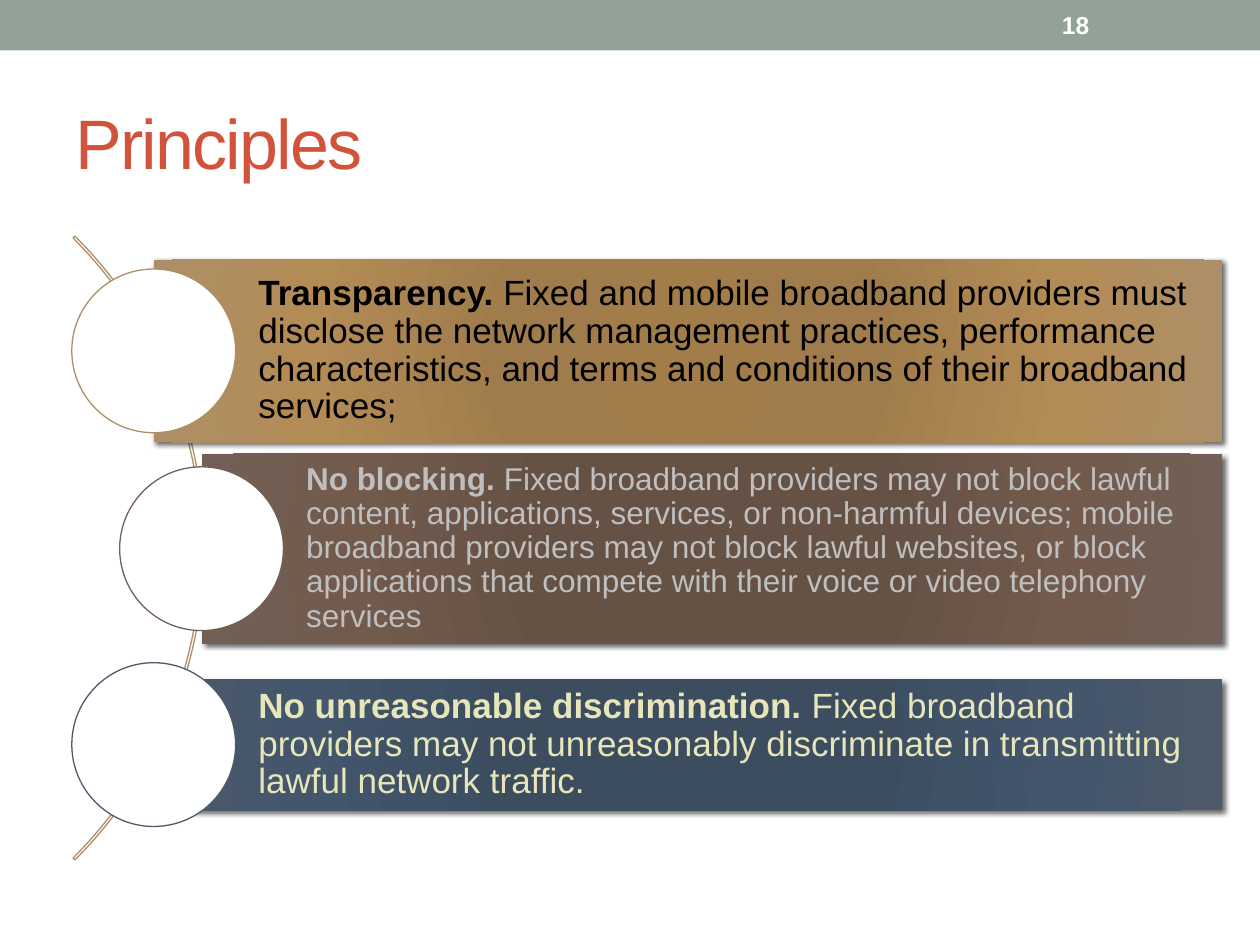
from lxml import etree
from pptx import Presentation
from pptx.dml.color import RGBColor
from pptx.enum.shapes import MSO_SHAPE as SHAPE
from pptx.enum.text import MSO_ANCHOR as ANCHOR, PP_ALIGN as ALIGN
from pptx.oxml import parse_xml
from pptx.oxml.ns import nsdecls, qn
from pptx.util import Inches, Pt

COLORS = {
    "band": "93A299", "title": "D2533C", "white": "FFFFFF", "arc": "AD8F67",
    "black": "000000", "gray": "BFBFBF", "cream": "E7E5BA",
}
GRADIENTS = {
    "tan": ["A37D49", "A07C4C", "B38B55", "AD8F67"],
    "brown": ["685044", "665145", "725A4D", "726056"],
    "navy": ["3B4D61", "3C4D60", "43566B", "4C5A6A"],
}
STOPS = [0, 34, 70, 100]
CIRCLE = 1.3

# Bar left, top and height, relative to the list box; the text follows
PRINCIPLES = [
    (0.65, 0.21, 1.45, "tan", "black", 20, "Transparency. ",
     "Fixed and mobile broadband providers must disclose the network management "
     "practices, performance characteristics, and terms and conditions of their "
     "broadband services;"),
    (1.03, 1.75, 1.51, "brown", "gray", 18, "No blocking. ",
     "Fixed broadband providers may not block lawful content, applications, "
     "services, or non-harmful devices; mobile broadband providers may not block "
     "lawful websites, or block applications that compete with their voice or "
     "video telephony services"),
    (0.65, 3.54, 1.04, "navy", "cream", 20, "No unreasonable discrimination. ",
     "Fixed broadband providers may not unreasonably discriminate in "
     "transmitting lawful network traffic."),
]


def rgb(value):
    return RGBColor.from_string(value)


def add_shape(s, kind, x, y, w, h, fill=None, line=None):
    sp = s.shapes.add_shape(kind, Inches(x), Inches(y), Inches(w), Inches(h))
    sp.shadow.inherit = False
    if fill:
        sp.fill.solid()
        sp.fill.fore_color.rgb = rgb(fill)
    else:
        sp.fill.background()
    if line:
        sp.line.color.rgb = rgb(line)
        sp.line.width = Pt(0.75)
    else:
        sp.line.fill.background()
    return sp


def add_run(p, text, size, color, bold=False):
    r = p.add_run()
    r.text = text
    r.font.name = "Arial"
    r.font.size = Pt(size)
    r.font.bold = bold
    r.font.color.rgb = rgb(color)
    return r


def add_label(s, x, y, w, h, text, size, color, bold=False):
    tf = s.shapes.add_textbox(Inches(x), Inches(y), Inches(w), Inches(h)).text_frame
    tf.word_wrap = True
    tf.vertical_anchor = ANCHOR.MIDDLE
    return add_run(tf.paragraphs[0], text, size, color, bold)


def style_bar(sp, colors):
    """Radial gradient and a soft shadow at the lower right."""
    stops = "".join(
        f'<a:gs pos="{pos * 1000}"><a:srgbClr val="{color}"/></a:gs>'
        for pos, color in zip(STOPS, colors))
    gradient = parse_xml(
        f'<a:gradFill {nsdecls("a")} rotWithShape="1"><a:gsLst>{stops}</a:gsLst>'
        '<a:path path="circle"><a:fillToRect l="100000" t="100000" r="100000" '
        'b="100000"/></a:path></a:gradFill>')
    props = sp._element.spPr
    props.replace(props.find(qn("a:noFill")), gradient)
    effects = props.find(qn("a:effectLst"))
    shadow = etree.SubElement(
        effects, qn("a:outerShdw"), blurRad=str(Pt(3)), dist=str(Pt(2)),
        dir=str(45 * 60000), algn="tl", rotWithShape="0")
    color = etree.SubElement(shadow, qn("a:srgbClr"), val=COLORS["black"])
    etree.SubElement(color, qn("a:alpha"), val="60000")


def add_principle(s, x, y, w, h, gradient, color, size, lead, body):
    # Bar with its text
    bar = add_shape(s, SHAPE.RECTANGLE, x, y, w, h)
    style_bar(bar, GRADIENTS[gradient])
    tf = bar.text_frame
    tf.word_wrap = True
    tf.vertical_anchor = ANCHOR.MIDDLE
    tf.margin_left = Inches(0.83)
    tf.margin_top = tf.margin_right = tf.margin_bottom = Inches(size * 0.003)
    p = tf.paragraphs[0]
    p.alignment = ALIGN.LEFT
    p.line_spacing = 0.9
    add_run(p, lead, size, COLORS[color], True)
    add_run(p, body, size, COLORS[color])
    # Circle centred on the bar's left edge
    add_shape(s, SHAPE.OVAL, x - CIRCLE / 2, y + (h - CIRCLE) / 2, CIRCLE, CIRCLE,
              COLORS["white"], GRADIENTS[gradient][-1])


def add_header(s, x, y, w):
    add_shape(s, SHAPE.RECTANGLE, x, y, w, 0.4, COLORS["band"])
    title = add_label(s, x + 0.5, y + 0.58, w - 1, 1.08, "Principles", 40,
                      COLORS["title"])
    title.font._element.set("spc", "-100")
    add_label(s, x + 8.33, y + 0.02, 1.17, 0.36, "18", 14, COLORS["white"], True)


def add_principles(s, x, y, w):
    # Thin arc behind the circles
    arc = add_shape(s, SHAPE.BLOCK_ARC, x - 5.95, y - 1, 7, 7, line=COLORS["arc"])
    for i, value in enumerate([189, 27, 0.003]):
        arc.adjustments[i] = value
    for left, top, height, *content in PRINCIPLES:
        add_principle(s, x + left, y + top, w - left, height, *content)


def main():
    prs = Presentation()
    prs.slide_width, prs.slide_height = Inches(10), Inches(7.5)
    s = prs.slides.add_slide(prs.slide_layouts[6])
    add_header(s, 0, 0, 10)
    add_principles(s, 0.57, 1.85, 9.13)
    prs.save("out.pptx")


if __name__ == "__main__":
    main()
